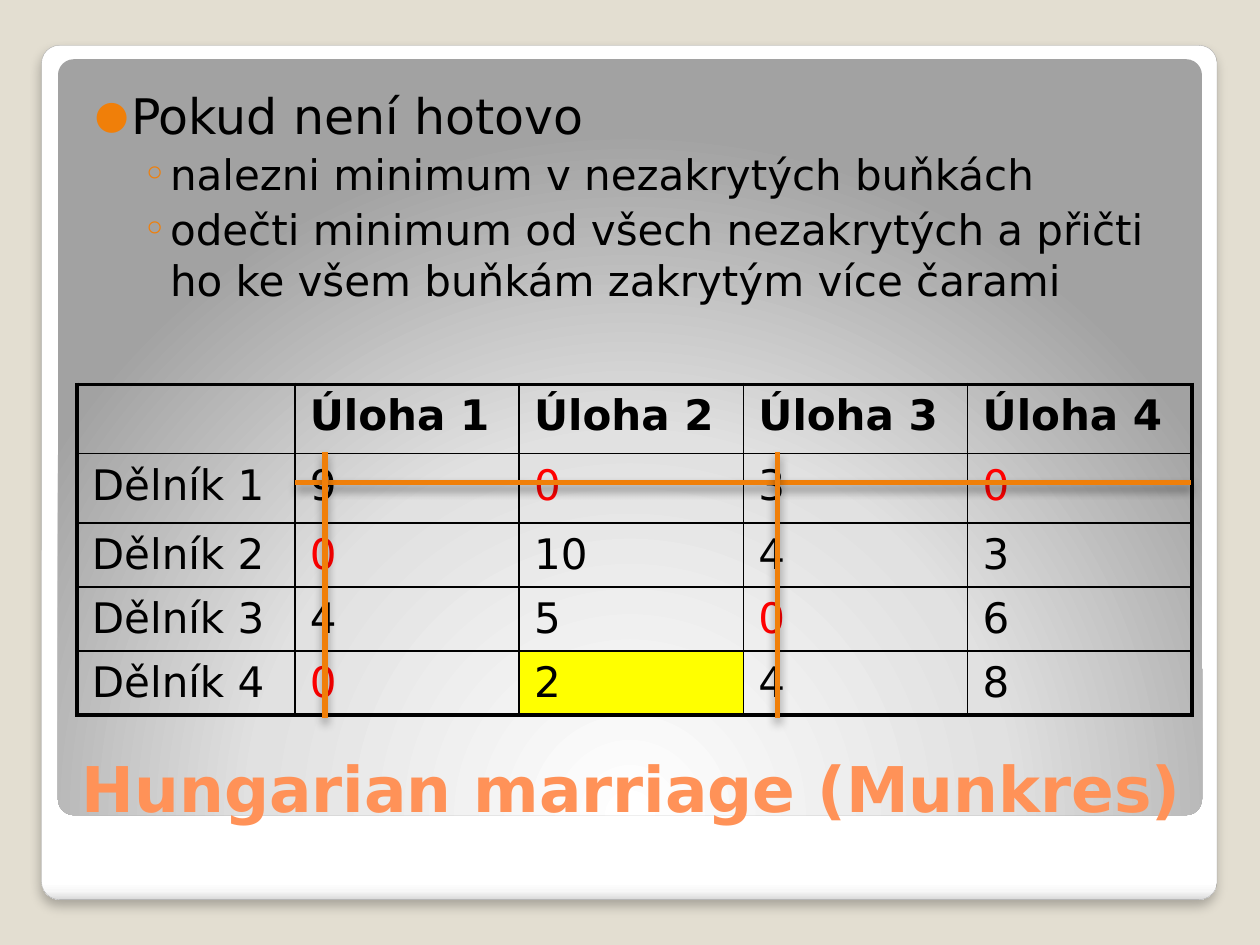
from lxml import etree
from pptx import Presentation
from pptx.dml.color import RGBColor
from pptx.enum.shapes import MSO_CONNECTOR, MSO_SHAPE
from pptx.enum.text import MSO_ANCHOR, MSO_AUTO_SIZE, PP_ALIGN
from pptx.oxml import parse_xml
from pptx.oxml.ns import qn
from pptx.util import Inches, Pt

FONT = "DejaVu Sans"
BEIGE = RGBColor(0xE3, 0xDE, 0xD1)
FRAME_EDGE = RGBColor(0xA4, 0xA4, 0xA4)
ORANGE = RGBColor(0xF0, 0x7F, 0x09)
TITLE_ORANGE = RGBColor(0xFF, 0x92, 0x58)
BLACK = RGBColor(0, 0, 0)
RED = RGBColor(0xFF, 0, 0)
YELLOW = RGBColor(0xFF, 0xFF, 0)

FRAME_STOPS = [(0, "FFFFFF"), (98, "FFFFFF"), (99, "F7F7F7"), (100, "DADADA")]
PANEL_STOPS = [(0, "FFFFFF"), (55, "E1E1E1"), (100, "A2A2A2")]
DOWNWARD = '<a:lin ang="5400000" scaled="0"/>'
FROM_BOTTOM = ('<a:path path="circle"><a:fillToRect l="50000" t="175000" '
               'r="50000" b="-75000"/></a:path>')

BULLETS = [
    (0, "Pokud není hotovo"),
    (1, "nalezni minimum v nezakrytých buňkách"),
    (1, "odečti minimum od všech nezakrytých a přičti ho ke všem buňkám "
        "zakrytým více čarami"),
]
# level: (size, left margin, hanging indent, bullet, bullet size in percent)
LEVELS = {0: (28, 0.29, 0.29, "●", 80), 1: (24, 0.6, 0.22, "◦", 100)}

COSTS = [[9, 0, 3, 0], [0, 10, 4, 3], [4, 5, 0, 6], [0, 2, 4, 8]]
MINIMUM_CELL = (4, 2)
COLUMN_WIDTHS = [1.73] + [1.78] * 4
ROW_HEIGHTS = [0.55] * 2 + [0.49] * 3


def add_child(parent, tag, **attributes):
    return etree.SubElement(parent, qn(tag), attributes)


def add_shadow(shape, opacity, blur, distance):
    effects = add_child(shape.element.spPr, "a:effectLst")
    shadow = add_child(effects, "a:outerShdw", blurRad=str(Pt(blur)),
                       dist=str(Pt(distance)), dir="5400000", rotWithShape="0")
    color = add_child(shadow, "a:srgbClr", val="000000")
    add_child(color, "a:alpha", val=str(opacity * 1000))


def place(shape, box):
    shape.left, shape.top, shape.width, shape.height = map(Inches, box)


def add_panel(slide, box, stops, direction):
    panel = slide.shapes.add_shape(MSO_SHAPE.ROUNDED_RECTANGLE, *map(Inches, box))
    panel.adjustments[0] = 0.021
    panel.line.fill.background()
    stop_xml = "".join(f'<a:gs pos="{pos * 1000}"><a:srgbClr val="{color}"/></a:gs>'
                       for pos, color in stops)
    gradient = parse_xml(
        '<a:gradFill xmlns:a="http://schemas.openxmlformats.org/drawingml/2006/main" '
        f'rotWithShape="1"><a:gsLst>{stop_xml}</a:gsLst>{direction}</a:gradFill>')
    panel.element.spPr.find(qn("a:prstGeom")).addnext(gradient)
    return panel


def add_backdrop(slide):
    slide.background.fill.solid()
    slide.background.fill.fore_color.rgb = BEIGE
    frame = add_panel(slide, (0.33, 0.36, 9.33, 6.78), FRAME_STOPS, DOWNWARD)
    frame.line.color.rgb = FRAME_EDGE
    frame.line.width = Pt(0.16)
    add_shadow(frame, 25, 6, 4)
    panel = add_panel(slide, (0.46, 0.47, 9.08, 6), PANEL_STOPS, FROM_BOTTOM)
    panel.shadow.inherit = False


def bring_to_front(shape):
    shape.element.getparent().append(shape.element)


def fill_title(title, box):
    place(title, box)
    bring_to_front(title)
    frame = title.text_frame
    frame.text = "Hungarian marriage (Munkres)"
    frame.auto_size = MSO_AUTO_SIZE.NONE
    frame.vertical_anchor = MSO_ANCHOR.BOTTOM
    heading = frame.paragraphs[0]
    heading.alignment = PP_ALIGN.LEFT
    heading.font.name, heading.font.size, heading.font.bold = FONT, Pt(36), True
    heading.font.color.rgb = TITLE_ORANGE


def fill_body(body, box):
    place(body, box)
    bring_to_front(body)
    frame = body.text_frame
    frame.auto_size = MSO_AUTO_SIZE.NONE
    frame.margin_left, frame.margin_top = Inches(0.2), Inches(0.1)
    frame.text = "\n".join(text for _, text in BULLETS)
    for item, (level, _) in zip(frame.paragraphs, BULLETS):
        size, margin, hanging, bullet, bullet_size = LEVELS[level]
        item.level = level
        item.space_before = Pt(2.5)
        item.font.name, item.font.size = FONT, Pt(size)
        item.font.color.rgb = BLACK
        props = item._p.get_or_add_pPr()
        props.set("marL", str(Inches(margin)))
        props.set("indent", str(-Inches(hanging)))
        # Bullet elements must precede the default run properties
        defaults = props.find(qn("a:defRPr"))
        add_child(add_child(props, "a:buClr"), "a:srgbClr", val=str(ORANGE))
        add_child(props, "a:buSzPct", val=str(bullet_size * 1000))
        add_child(props, "a:buFont", typeface=FONT)
        add_child(props, "a:buChar", char=bullet)
        if defaults is not None:
            props.append(defaults)


def set_borders(cell, widths):
    props = cell._tc.get_or_add_tcPr()
    for side, width in zip("LRTB", widths):
        border = add_child(props, f"a:ln{side}", w=str(Pt(width)))
        add_child(add_child(border, "a:solidFill"), "a:srgbClr", val=str(BLACK))


def add_cost_table(slide, box):
    labels = [[""] + [f"Úloha {n}" for n in range(1, 5)]]
    rows = labels + [[f"Dělník {n}"] + costs for n, costs in enumerate(COSTS, 1)]
    last = len(rows) - 1
    table = slide.shapes.add_table(len(rows), len(rows[0]), *map(Inches, box)).table
    table.first_row = table.horz_banding = False
    for column, width in zip(table.columns, COLUMN_WIDTHS):
        column.width = Inches(width)
    for row, height in zip(table.rows, ROW_HEIGHTS):
        row.height = Inches(height)
    for r, values in enumerate(rows):
        for c, value in enumerate(values):
            cell = table.cell(r, c)
            cell.margin_left = cell.margin_right = Inches(0.12)
            cell.margin_top = cell.margin_bottom = Inches(0.06)
            cell.text = str(value)
            entry = cell.text_frame.paragraphs[0]
            entry.font.name, entry.font.size = FONT, Pt(24)
            entry.font.bold = r == 0
            entry.font.color.rgb = RED if value == 0 else BLACK
            outer = (c == 0, c == last, r == 0, r == last)
            set_borders(cell, [2.25 if edge else 1 for edge in outer])
            if (r, c) == MINIMUM_CELL:
                cell.fill.solid()
                cell.fill.fore_color.rgb = YELLOW
            else:
                cell.fill.background()


def add_cover_lines(slide, box):
    left, top, width, height = box
    right, bottom = left + width, top + height
    row_cover = [(left, 3.83, right, 3.83)]
    column_covers = [(x, bottom, x, top) for x in (2.58, 6.17)]
    for ends in row_cover + column_covers:
        cover = slide.shapes.add_connector(MSO_CONNECTOR.STRAIGHT, *map(Inches, ends))
        cover.line.color.rgb = ORANGE
        cover.line.width = Pt(3)
        add_shadow(cover, 40, 5.2, 3)


def main():
    deck = Presentation()
    deck.slide_width, deck.slide_height = Inches(10), Inches(7.5)
    slide = deck.slides.add_slide(deck.slide_layouts[1])
    add_backdrop(slide)
    fill_title(slide.shapes.title, (0.55, 5.45, 8.95, 1.15))
    fill_body(slide.placeholders[1], (0.55, 0.58, 8.95, 5.28))
    add_cost_table(slide, (0.61, 3.05, 8.85, 2.57))
    add_cover_lines(slide, (2.34, 3.59, 7.11, 2.11))
    deck.save("out.pptx")


if __name__ == "__main__":
    main()
